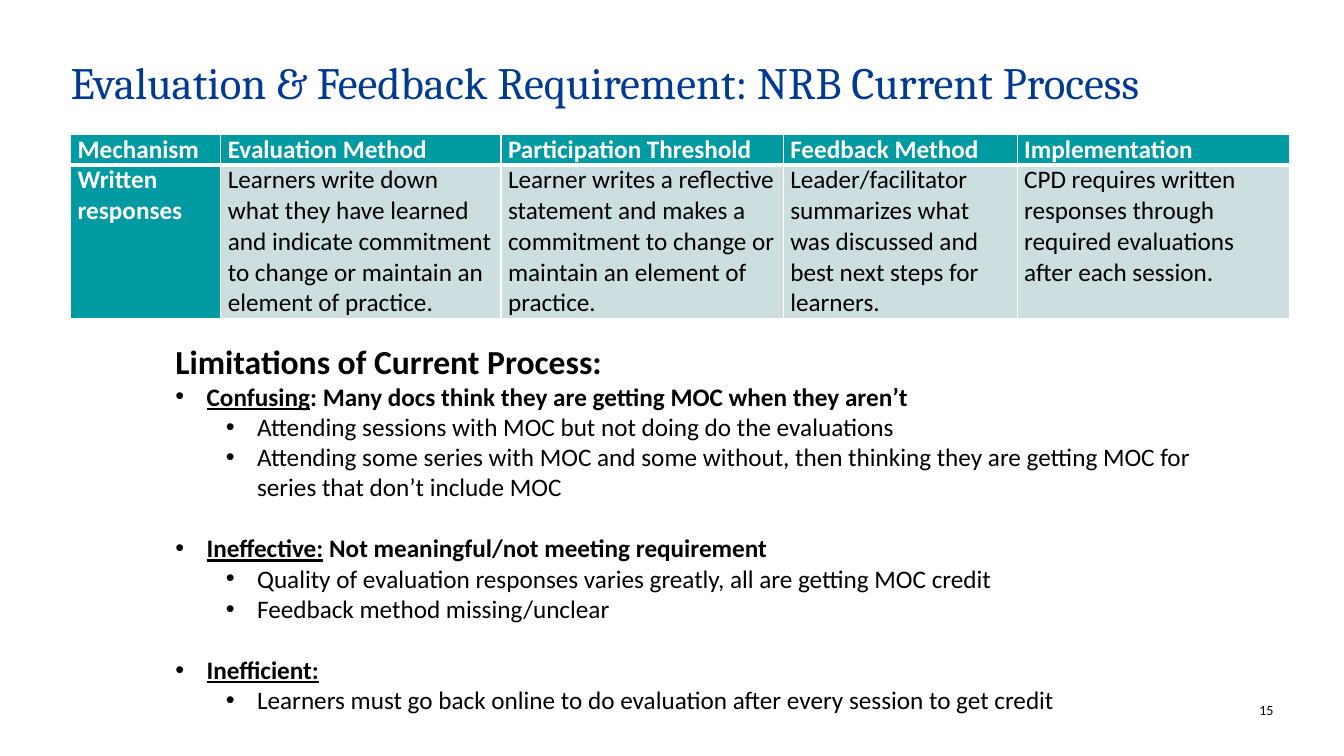
import lxml.etree
import pptx
import pptx.dml.color
import pptx.enum.text
import pptx.oxml.ns
import pptx.util

NAVY = pptx.dml.color.RGBColor(0x00, 0x3A, 0x93)
TEAL = pptx.dml.color.RGBColor(0x00, 0x9A, 0xA3)
PALE = pptx.dml.color.RGBColor(0xCC, 0xDE, 0xE0)
WHITE = pptx.dml.color.RGBColor(0xFF, 0xFF, 0xFF)
BLACK = pptx.dml.color.RGBColor(0x00, 0x00, 0x00)

SLIDE_WIDTH = pptx.util.Inches(13.33)
SLIDE_HEIGHT = pptx.util.Inches(7.5)
GRID_COLUMNS, GRID_ROWS = 100, 75

TITLE_BOX = (5.25, 5.7, 92.95, 5.5)
TABLE_BOX = (5.25, 13.3, 90.68, 18)
LIST_BOX = (12.3, 33.3, 81.3, 38.4)
NUMBER_BOX = (91.9, 69.6, 2.85, 1.7)

TITLE_FONT = {"name": "Cambria", "size": pptx.util.Pt(32), "bold": False}
BODY_FONT = {"name": "Calibri", "size": pptx.util.Pt(18), "bold": False}
HEADING_FONT = {**BODY_FONT, "size": pptx.util.Pt(24), "bold": True}
TOPIC_FONT = {**BODY_FONT, "bold": True}
KEYWORD_FONT = {**TOPIC_FONT, "underline": True}
NUMBER_FONT = {**BODY_FONT, "size": pptx.util.Pt(10)}
NO_INSETS = dict.fromkeys(
    ("margin_left", "margin_top", "margin_right", "margin_bottom"), 0)

COLUMN_SHARES = (11.18, 20.85, 21, 17.4, 20.25)
ROW_SHARES = (3, 15)
MECHANISMS = (
    ("Mechanism", "Evaluation Method", "Participation Threshold",
     "Feedback Method", "Implementation"),
    ("Written responses",
     "Learners write down what they have learned and indicate commitment "
     "to change or maintain an element of practice.",
     "Learner writes a reflective statement and makes a commitment to "
     "change or maintain an element of practice.",
     "Leader/facilitator summarizes what was discussed and best next steps "
     "for learners.",
     "CPD requires written responses through required evaluations after "
     "each session."),
)
LIMITATIONS = (
    ("Confusing", ": Many docs think they are getting MOC when they aren’t",
     ("Attending sessions with MOC but not doing do the evaluations",
      "Attending some series with MOC and some without, then thinking they "
      "are getting MOC for series that don’t include MOC")),
    ("Ineffective:", " Not meaningful/not meeting requirement",
     ("Quality of evaluation responses varies greatly, all are getting MOC "
      "credit",
      "Feedback method missing/unclear")),
    ("Inefficient:", "",
     ("Learners must go back online to do evaluation after every session to "
      "get credit",)),
)


def across(columns):
    """Turn grid columns into a length."""
    return int(SLIDE_WIDTH * columns / GRID_COLUMNS)


def down(rows):
    """Turn grid rows into a length."""
    return int(SLIDE_HEIGHT * rows / GRID_ROWS)


def place(box):
    """Return left, top, width and height of a grid box."""
    left, top, width, height = box
    return across(left), down(top), across(width), down(height)


def assign(target, values):
    """Set every attribute named in a dict."""
    for name, value in values.items():
        setattr(target, name, value)


def move(shape, box):
    """Put a placeholder into a grid box."""
    assign(shape, dict(zip(("left", "top", "width", "height"), place(box))))


def write(para, text, font, colour=BLACK):
    """Add one formatted span to a paragraph."""
    span = para.add_run()
    span.text = text
    assign(span.font, font)
    span.font.color.rgb = colour


def indent(para, margin, bullet):
    """Set the hanging indent and the bullet of a paragraph."""
    properties = para._p.get_or_add_pPr()
    hang = pptx.util.Inches(0.31) if bullet else 0
    properties.set("marL", str(pptx.util.Inches(margin)))
    properties.set("indent", str(-hang))
    if bullet:
        mark = lxml.etree.SubElement(properties, pptx.oxml.ns.qn("a:buChar"))
        mark.set("char", bullet)
    else:
        lxml.etree.SubElement(properties, pptx.oxml.ns.qn("a:buNone"))


def border(cell, widths):
    """Draw white cell borders, given points for each side."""
    properties = cell._tc.get_or_add_tcPr()
    for side, points in widths.items():
        line = lxml.etree.SubElement(
            properties, pptx.oxml.ns.qn("a:ln" + side),
            w=str(pptx.util.Pt(points)))
        fill = lxml.etree.SubElement(line, pptx.oxml.ns.qn("a:solidFill"))
        lxml.etree.SubElement(
            fill, pptx.oxml.ns.qn("a:srgbClr"), val=str(WHITE))


def add_title(page, box):
    """Fill the title placeholder."""
    title = page.shapes.title
    move(title, box)
    assign(title.text_frame, {
        **NO_INSETS, "word_wrap": True,
        "auto_size": pptx.enum.text.MSO_AUTO_SIZE.NONE})
    para = title.text_frame.paragraphs[0]
    assign(para, {"alignment": pptx.enum.text.PP_ALIGN.LEFT,
                  "line_spacing": 0.9})
    write(para, "Evaluation & Feedback Requirement: NRB Current Process",
          TITLE_FONT, NAVY)


def add_mechanisms(page, box):
    """Build the table with a teal head row and head column."""
    table = page.shapes.add_table(
        len(ROW_SHARES), len(COLUMN_SHARES), *place(box)).table
    for column, share in zip(table.columns, COLUMN_SHARES):
        column.width = across(share)
    for row, share in zip(table.rows, ROW_SHARES):
        row.height = down(share)
    inset = pptx.util.Inches(0.07)
    for row, texts in enumerate(MECHANISMS):
        for column, text in enumerate(texts):
            cell = table.cell(row, column)
            head = row == 0 or column == 0
            border(cell, {"L": 1, "R": 1, "T": 3 if row else 1,
                          "B": 1 if row else 3})
            cell.fill.solid()
            cell.fill.fore_color.rgb = TEAL if head else PALE
            assign(cell, {**NO_INSETS, "margin_left": inset,
                          "margin_right": inset})
            write(cell.text_frame.paragraphs[0], text,
                  TOPIC_FONT if head else BODY_FONT,
                  WHITE if head else BLACK)


def add_limitations(page, box):
    """Fill the body placeholder with the two-level list."""
    body = page.placeholders[1]
    move(body, box)
    frame = body.text_frame
    assign(frame, {"word_wrap": True,
                   "auto_size": pptx.enum.text.MSO_AUTO_SIZE.NONE})
    heading = frame.paragraphs[0]
    heading.space_before = 0
    indent(heading, 0, None)
    write(heading, "Limitations of Current Process:", HEADING_FONT)
    for number, (keyword, claim, details) in enumerate(LIMITATIONS):
        topic = frame.add_paragraph()
        topic.space_before = pptx.util.Pt(22 if number else 0)
        indent(topic, 0.31, "•")
        write(topic, keyword, KEYWORD_FONT)
        if claim:
            write(topic, claim, TOPIC_FONT)
        for detail in details:
            para = frame.add_paragraph()
            assign(para, {"level": 1, "space_before": 0})
            indent(para, 0.81, "•")
            write(para, detail, BODY_FONT)


def add_number(page, box):
    """Write the page number at the lower right."""
    frame = page.shapes.add_textbox(*place(box)).text_frame
    assign(frame, {**NO_INSETS, "word_wrap": True})
    para = frame.paragraphs[0]
    para.alignment = pptx.enum.text.PP_ALIGN.RIGHT
    write(para, "15", NUMBER_FONT)


def main():
    """Build and save the deck."""
    deck = pptx.Presentation()
    assign(deck, {"slide_width": SLIDE_WIDTH, "slide_height": SLIDE_HEIGHT})
    page = deck.slides.add_slide(deck.slide_layouts[1])
    add_title(page, TITLE_BOX)
    add_mechanisms(page, TABLE_BOX)
    add_limitations(page, LIST_BOX)
    add_number(page, NUMBER_BOX)
    deck.save("out.pptx")


if __name__ == "__main__":
    main()
